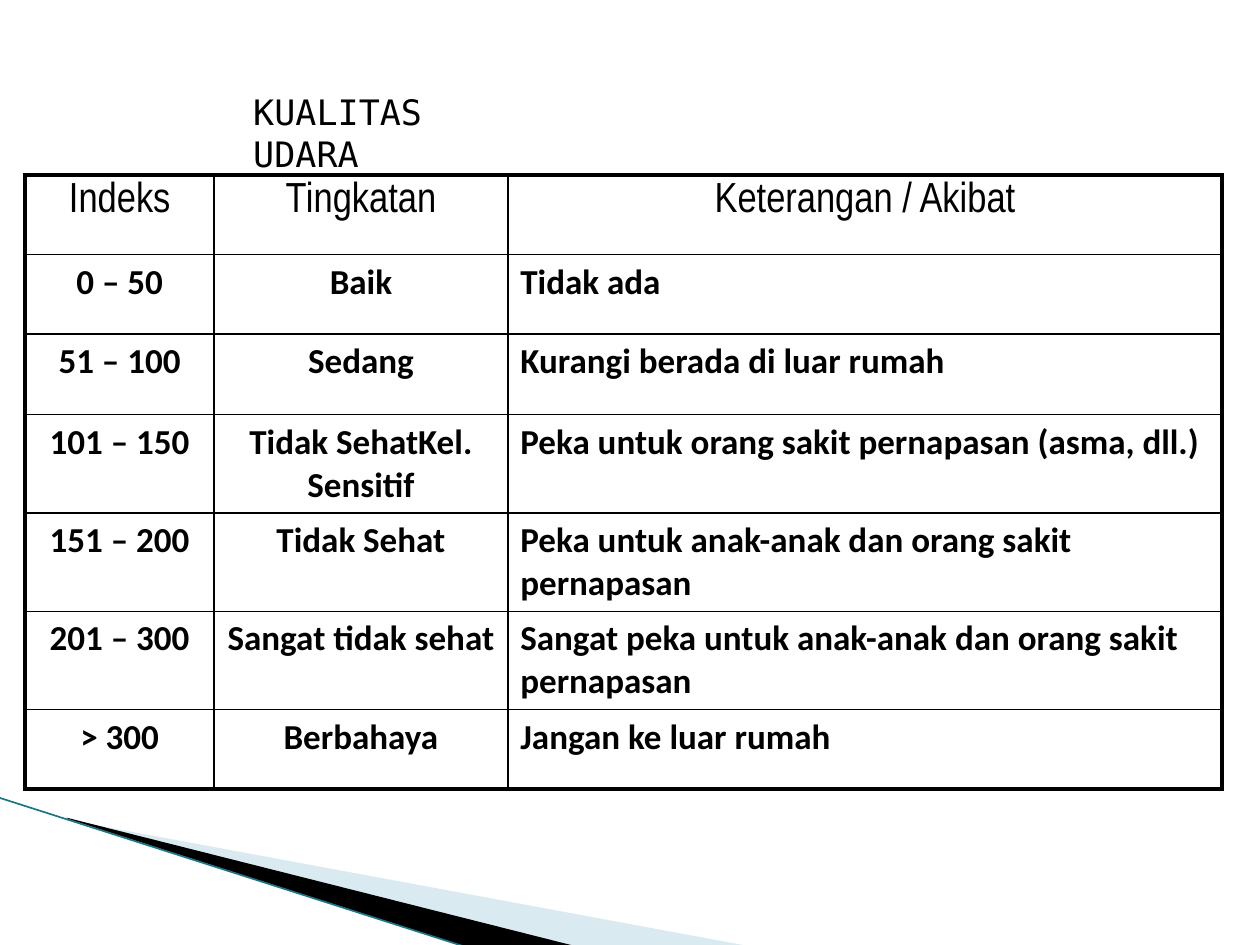
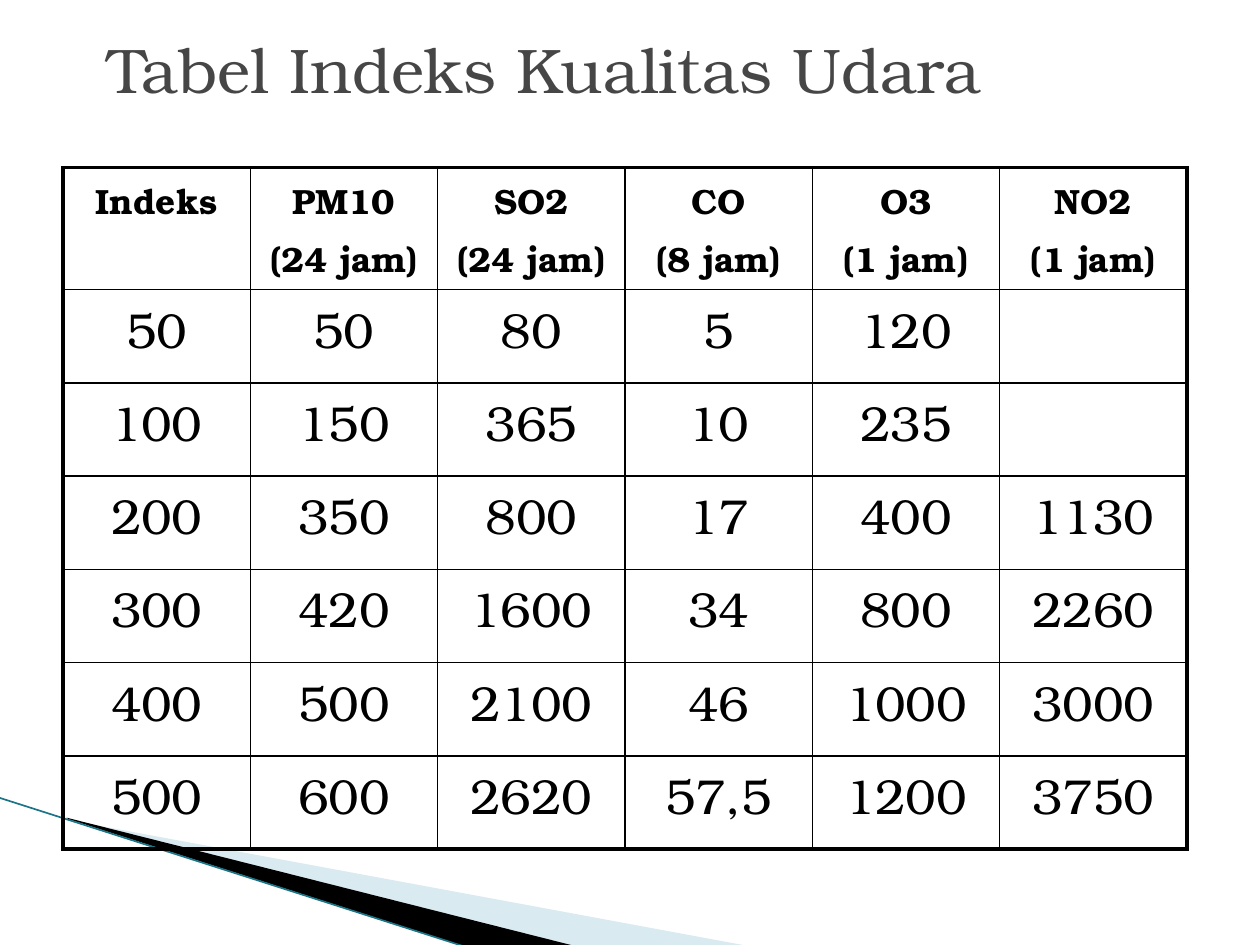
"""Build two slides with air quality index tables over a shared corner band."""
from lxml.etree import SubElement
from pptx import Presentation
from pptx.dml.color import RGBColor
from pptx.enum.shapes import MSO_CONNECTOR
from pptx.enum.text import MSO_ANCHOR, MSO_AUTO_SIZE, PP_ALIGN
from pptx.oxml.ns import qn
from pptx.util import Inches, Pt

BLACK = RGBColor(0x00, 0x00, 0x00)
TITLE_GRAY = RGBColor(0x46, 0x46, 0x46)
PALE_BLUE = RGBColor(0xA0, 0xCB, 0xDC)
TEAL = RGBColor(0x1B, 0x75, 0x87)
SERIF = "TeX Gyre Bonum"

BANDS = [
    (PALE_BLUE, 40, [(0.55, 6.51), (5.95, 7.51), (4.56, 7.51), (0.55, 6.5)]),
    (BLACK, 100, [(0.53, 6.49), (4.57, 7.51), (3.72, 7.52), (0.54, 6.5)]),
]

LEVELS = [
    ["Indeks", "Tingkatan", "Keterangan / Akibat"],
    ["0 – 50", "Baik", "Tidak ada"],
    ["51 – 100", "Sedang", "Kurangi berada di luar rumah"],
    ["101 – 150", "Tidak SehatKel. Sensitif", "Peka untuk orang sakit pernapasan (asma, dll.)"],
    ["151 – 200", "Tidak Sehat", "Peka untuk anak-anak dan orang sakit pernapasan"],
    ["201 – 300", "Sangat tidak sehat", "Sangat peka untuk anak-anak dan orang sakit pernapasan"],
    ["> 300", "Berbahaya", "Jangan ke luar rumah"],
]
POLLUTANTS = [
    ["Indeks", "PM10\n(24 jam)", "SO2\n(24 jam)", "CO\n(8 jam)", "O3\n(1 jam)", "NO2\n(1 jam)"],
    ["50", "50", "80", "5", "120", ""],
    ["100", "150", "365", "10", "235", ""],
    ["200", "350", "800", "17", "400", "1130"],
    ["300", "420", "1600", "34", "800", "2260"],
    ["400", "500", "2100", "46", "1000", "3000"],
    ["500", "600", "2620", "57,5", "1200", "3750"],
]

SLIDES = [
    {
        "title": "KUALITAS\vUDARA",
        "title_box": (1.91, 0.67, 2.68, 0.43),
        "title_anchor": MSO_ANCHOR.TOP,
        "title_font": {"name": "DejaVu Sans Mono", "size": Pt(20), "bold": False},
        "title_color": BLACK,
        "rows": LEVELS,
        "table_origin": (0.2, 1.39),
        "widths": [1.5, 2.33, 5.67],
        "heights": [0.63, 0.63, 0.64, 0.78, 0.78, 0.78, 0.63],
        "header_font": {"name": "Arial Narrow", "size": Pt(24), "bold": False},
        "body_font": {"name": "Calibri", "size": Pt(20), "bold": True},
        "left_columns": [2],
    },
    {
        "title": "Tabel Indeks Kualitas Udara",
        "title_box": (0.75, 0.25, 8.5, 0.58),
        "title_anchor": MSO_ANCHOR.MIDDLE,
        "title_font": {"name": SERIF, "size": Pt(36), "bold": False},
        "title_color": TITLE_GRAY,
        "rows": POLLUTANTS,
        "table_origin": (0.5, 1.33),
        "widths": [8.92 / 6] * 6,
        "heights": [0.97] + [0.74] * 6,
        "header_font": {"name": SERIF, "size": Pt(20), "bold": True},
        "body_font": {"name": SERIF, "size": Pt(28), "bold": False},
        "left_columns": [],
    },
]


def format_font(font, values, color):
    for name, value in values.items():
        setattr(font, name, value)
    font.color.rgb = color


def set_border(cell, side, points):
    line = SubElement(cell._tc.get_or_add_tcPr(), qn(f"a:ln{side}"), w=str(Pt(points)))
    fill = SubElement(line, qn("a:solidFill"))
    SubElement(fill, qn("a:srgbClr"), val=str(BLACK))


presentation = Presentation()
presentation.slide_width = Inches(10)
presentation.slide_height = Inches(7.5)
title_only = presentation.slide_layouts[5]

for content in SLIDES:
    slide = presentation.slides.add_slide(title_only)

    for color, opacity, points in BANDS:
        corners = [(Inches(x), Inches(y)) for x, y in points]
        builder = slide.shapes.build_freeform(*corners[0])
        builder.add_line_segments(corners[1:], close=True)
        band = builder.convert_to_shape()
        band.shadow.inherit = False
        band.fill.solid()
        band.fill.fore_color.rgb = color
        band.line.fill.background()
        if opacity < 100:
            color_element = band._element.spPr.find(f".//{qn('a:srgbClr')}")
            SubElement(color_element, qn("a:alpha"), val=str(opacity * 1000))

    edge = slide.shapes.add_connector(
        MSO_CONNECTOR.STRAIGHT, Inches(-0.01), Inches(6.33), Inches(3.71), Inches(7.52))
    edge.line.color.rgb = TEAL
    edge.line.width = Pt(0.95)
    SubElement(edge._element.spPr, qn("a:effectLst"))

    title = slide.shapes.title
    title.left, title.top, title.width, title.height = map(Inches, content["title_box"])
    title_frame = title.text_frame
    title_frame.text = content["title"]
    title_frame.word_wrap = True
    title_frame.auto_size = MSO_AUTO_SIZE.NONE
    title_frame.vertical_anchor = content["title_anchor"]
    title_paragraph = title_frame.paragraphs[0]
    title_paragraph.alignment = PP_ALIGN.LEFT
    format_font(title_paragraph.font, content["title_font"], content["title_color"])

    rows, widths, heights = content["rows"], content["widths"], content["heights"]
    left, top = content["table_origin"]
    table = slide.shapes.add_table(
        len(rows), len(widths), Inches(left), Inches(top),
        Inches(sum(widths)), Inches(sum(heights))).table
    table.first_row = False
    table.horz_banding = False
    for column, width in zip(table.columns, widths):
        column.width = Inches(width)
    for row, height in zip(table.rows, heights):
        row.height = Inches(height)

    last_row, last_column = len(rows) - 1, len(widths) - 1
    for row_index, texts in enumerate(rows):
        for column_index, text in enumerate(texts):
            cell = table.cell(row_index, column_index)
            is_header = row_index == 0
            outer_sides = {
                "L": column_index == 0,
                "R": column_index == last_column,
                "T": is_header,
                "B": row_index == last_row,
            }
            for side, is_outer in outer_sides.items():
                set_border(cell, side, 2.25 if is_outer else 1)
            cell.fill.background()
            cell.text = text
            is_left = column_index in content["left_columns"] and not is_header
            for index, paragraph in enumerate(cell.text_frame.paragraphs):
                paragraph.alignment = PP_ALIGN.LEFT if is_left else PP_ALIGN.CENTER
                if index:
                    paragraph.space_before = Pt(4)
                font_values = content["header_font" if is_header else "body_font"]
                format_font(paragraph.font, font_values, BLACK)

presentation.save("out.pptx")
